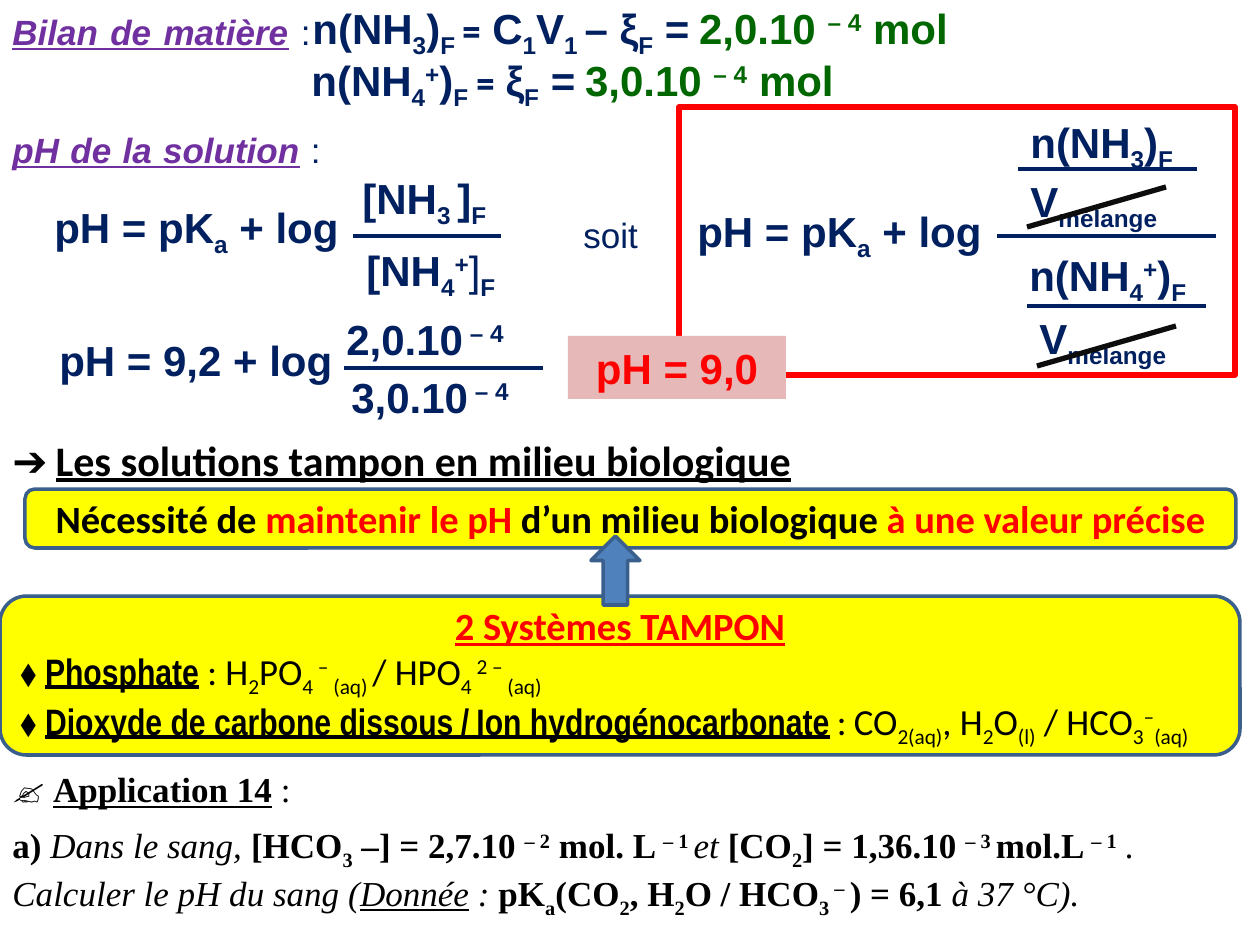
from dataclasses import dataclass, replace

import pptx
import pptx.dml.color
import pptx.enum.shapes
import pptx.enum.text
import pptx.oxml.ns
import pptx.util
from lxml import etree

RGBColor = pptx.dml.color.RGBColor
Shape = pptx.enum.shapes.MSO_SHAPE
Align = pptx.enum.text.PP_ALIGN
Anchor = pptx.enum.text.MSO_ANCHOR
AutoSize = pptx.enum.text.MSO_AUTO_SIZE

NAVY = RGBColor(0x00, 0x20, 0x60)
PURPLE = RGBColor(0x70, 0x30, 0xA0)
GREEN = RGBColor(0x00, 0x66, 0x00)
RED = RGBColor(0xFF, 0x00, 0x00)
BLACK = RGBColor(0x00, 0x00, 0x00)
INK = RGBColor(0x0D, 0x0D, 0x0D)
WHITE = RGBColor(0xFF, 0xFF, 0xFF)
YELLOW = RGBColor(0xFF, 0xFF, 0x00)
PINK = RGBColor(0xE6, 0xB9, 0xB8)
BLUE = RGBColor(0x4F, 0x81, 0xBD)
EDGE = RGBColor(0x3A, 0x5F, 0x8C)

PX_PER_INCH = 126
ROW = 63  # height of a 24 pt line of text
BASELINES = {"_": "-25000", "^": "30000"}


@dataclass(frozen=True)
class Style:
    size: int
    font: str
    color: RGBColor
    bold: bool = False
    italic: bool = False
    underline: bool = False


FORMULA = Style(24, "Arial", NAVY, bold=True)
RESULT = replace(FORMULA, color=GREEN)
EQUALS = replace(FORMULA, font="Cabin")
GAP = replace(FORMULA, size=20)
PLAIN = Style(20, "Arial", NAVY)
LABEL = Style(20, "Arial", PURPLE, True, True, True)
HEADING = Style(24, "Calibri", BLACK, bold=True, underline=True)
NEED = Style(22, "Calibri", BLACK, bold=True)
NEED_RED = replace(NEED, color=RED)
BUFFER = Style(21, "Calibri", BLACK)
BUFFER_NAME = Style(21, "Arial Narrow", BLACK, bold=True, underline=True)
BUFFER_GAP = replace(BUFFER_NAME, size=18)
TIMES = Style(20, "Times New Roman", BLACK)
TIMES_BOLD = replace(TIMES, bold=True)
TIMES_ITALIC = replace(TIMES, italic=True)


def px(length):
    return round(length * pptx.util.Inches(1) / PX_PER_INCH)


def add_spans(para, markup, style):
    """Add runs split at |, where a leading _ lowers and ^ raises the run."""
    for piece in markup.split("|"):
        span = para.add_run()
        span.text = piece.lstrip("_^")
        font = span.font
        font.size = pptx.util.Pt(style.size)
        font.name = style.font
        font.color.rgb = style.color
        font.bold, font.italic = style.bold, style.italic
        font.underline = style.underline
        if piece[0] in BASELINES:
            span._r.get_or_add_rPr().set("baseline", BASELINES[piece[0]])


def fill_text(box, paragraphs, align=Align.LEFT, anchor=Anchor.TOP, wrap=True, grow=True):
    frame = box.text_frame
    frame.word_wrap = wrap
    frame.vertical_anchor = anchor
    frame.auto_size = AutoSize.SHAPE_TO_FIT_TEXT if grow else AutoSize.NONE
    for index, spans in enumerate(paragraphs):
        para = frame.add_paragraph() if index else frame.paragraphs[0]
        para.alignment = align
        for markup, style in spans:
            add_spans(para, markup, style)


def add_text(page, left, top, width, height, spans, **layout):
    box = page.shapes.add_textbox(px(left), px(top), px(width), px(height))
    fill_text(box, [spans], **({"align": Align.JUSTIFY} | layout))


def add_term(page, left, top, width, markup):
    """Add one unwrapped numerator or denominator."""
    add_text(page, left, top, width, ROW, [(markup, FORMULA)], align=Align.LEFT, wrap=False)


def add_panel(page, kind, left, top, width, height, fill=None, line=None, weight=2):
    panel = page.shapes.add_shape(kind, px(left), px(top), px(width), px(height))
    panel.shadow.inherit = False
    if fill is None:
        panel.fill.background()
    else:
        panel.fill.solid()
        panel.fill.fore_color.rgb = fill
    if line is None:
        panel.line.fill.background()
    else:
        panel.line.color.rgb = line
        panel.line.width = pptx.util.Pt(weight)
    return panel


def add_line(page, x1, y1, x2, y2, color=NAVY, weight=2.25):
    line = page.shapes.add_connector(
        pptx.enum.shapes.MSO_CONNECTOR.STRAIGHT, px(x1), px(y1), px(x2), px(y2))
    line.line.color.rgb = color
    line.line.width = pptx.util.Pt(weight)
    etree.SubElement(line._element.spPr, pptx.oxml.ns.qn("a:effectLst"))


def add_balance(page):
    add_text(page, 0, 4, 323, 55, [("Bilan de matière", LABEL), (" : ", PLAIN)])
    add_text(page, 300, -4, 727, ROW, [
        ("n(NH|_3|)|_F ", FORMULA), ("=", EQUALS), (" ", GAP),
        ("C|_1|V|_1 |– ξ|_F| =", FORMULA), (" ", GAP), ("2,0.10 |^– 4| mol", RESULT)])
    add_text(page, 299, 48, 599, ROW, [
        ("n(NH|_4|^+|)|_F ", FORMULA), ("=", EQUALS), (" ", GAP),
        ("ξ|_F| =", FORMULA), (" ", GAP), ("3,0.10 |^– 4| mol", RESULT)])


def add_ph_calculation(page):
    add_panel(page, Shape.RECTANGLE, 679, 107, 556, 268, line=RED, weight=3)
    title = add_panel(page, Shape.RECTANGLE, 0, 122, 333, 55, fill=WHITE)
    fill_text(title, [[("pH de la solution", LABEL), (" : ", PLAIN)]], Align.JUSTIFY)

    for left, top, markup in ((42, 195, "pH = pK|_a| + log"),
                              (685, 199, "pH = pK|_a| + log"),
                              (47, 328, "pH = 9,2 + log")):
        add_text(page, left, top, 338, ROW, [(markup, FORMULA)])
    add_text(page, 571, 207, 89, 55, [("soit", PLAIN)])

    add_term(page, 350, 166, 156, "[NH|_3 |]|_F")
    add_text(page, 354, 238, 163, ROW, [
        ("[NH|_4|^+", FORMULA), ("]", replace(FORMULA, bold=False)), ("_F", FORMULA)],
        align=Align.LEFT, wrap=False)
    add_term(page, 334, 307, 190, "2,0.10|^ – 4")
    add_term(page, 339, 365, 190, "3,0.10|^ – 4")
    add_term(page, 1018, 110, 174, "n(NH|_3|)|_F")
    add_term(page, 1017, 243, 190, "n(NH|_4|^+|)|_F")
    for left, top in ((1018, 169), (1027, 306)):
        add_term(page, left, top, 169, "V|_mélange")

    for left, right, y in ((353, 501, 236), (344, 543, 368), (997, 1216, 236),
                           (1018, 1197, 169), (1027, 1206, 306)):
        add_line(page, left, y, right, y)
    for left, bottom in ((1027, 227), (1037, 366)):
        add_line(page, left, bottom, left + 139, bottom - 40, INK, 3)

    answer = add_panel(page, Shape.RECTANGLE, 568, 336, 218, ROW, fill=PINK)
    fill_text(answer, [[("pH = 9,0", replace(FORMULA, color=RED))]], Align.CENTER)


def add_buffers(page):
    add_text(page, 0, 428, 1260, ROW, [
        ("➔", replace(HEADING, bold=False, underline=False)), (" ", replace(BUFFER, size=20)),
        ("Les solutions tampon en milieu biologique", HEADING)], anchor=Anchor.MIDDLE)

    need = add_panel(page, Shape.ROUNDED_RECTANGLE, 25, 489, 1211, 59, YELLOW, EDGE)
    fill_text(need, [[
        ("Nécessité de ", NEED), ("maintenir le pH", NEED_RED),
        (" d’un milieu biologique ", NEED), ("à une valeur précise", NEED_RED)]],
        Align.CENTER, Anchor.MIDDLE, grow=False)

    systems = add_panel(page, Shape.ROUNDED_RECTANGLE, 0, 596, 1240, 159, YELLOW, EDGE)
    fill_text(systems, [
        [("2 Systèmes TAMPON", replace(NEED_RED, underline=True))],
        [("⬧ ", BUFFER), ("Phosphate", BUFFER_NAME), (" ", replace(BUFFER, bold=True)),
         (": H|_2|PO|_4 |^– |_(aq) |/ HPO|_4 |^2 – |_(aq)", BUFFER)],
        [("⬧ ", BUFFER), ("Dioxyde de carbone dissous", BUFFER_NAME), (" ", BUFFER_GAP),
         ("/", BUFFER_NAME), (" ", BUFFER_GAP), ("Ion hydrogénocarbonate", BUFFER_NAME),
         (" ", replace(BUFFER_GAP, bold=False, underline=False)), (":", BUFFER),
         (" ", replace(BUFFER, size=18)),
         ("CO|_2(aq)|, H|_2|O|_(l)| / HCO|_3|^–|_(aq)", BUFFER)],
    ], anchor=Anchor.MIDDLE, grow=False)
    systems.text_frame.paragraphs[0].alignment = Align.CENTER

    arrow = add_panel(page, Shape.RIGHT_ARROW, 581, 546, 69, 49, BLUE, EDGE)
    arrow.rotation = 270


def add_exercise(page):
    exercise = add_panel(page, Shape.RECTANGLE, 0, 770, 1260, 147, fill=WHITE)
    fill_text(exercise, [
        [("✍ ", TIMES_BOLD), ("Application 14", replace(TIMES_BOLD, underline=True)),
         ("\u00a0:", TIMES)],
        [("a)", TIMES_BOLD), (" Dans le sang, ", TIMES_ITALIC),
         ("[HCO|_3| –] = 2,7.10 |^– 2| mol. L |^– 1 ", TIMES_BOLD), ("et ", TIMES_ITALIC),
         ("[CO|_2|] = 1,36.10 |^– 3 |mol.L |^– 1", TIMES_BOLD),
         (" . Calculer le pH du sang (", TIMES_ITALIC),
         ("Donnée", replace(TIMES_ITALIC, underline=True)), (" : ", TIMES_ITALIC),
         ("pK|_a|(CO|_2|, H|_2|O / HCO|_3|^ – |) = 6,1 ", TIMES_BOLD),
         ("à 37 °C).", TIMES_ITALIC)],
    ], anchor=Anchor.MIDDLE, grow=False)
    exercise.text_frame.paragraphs[1].space_before = pptx.util.Pt(8)


def main():
    deck = pptx.Presentation()
    deck.slide_width, deck.slide_height = px(1260), px(945)
    page = deck.slides.add_slide(deck.slide_layouts[6])
    add_balance(page)
    add_ph_calculation(page)
    add_exercise(page)
    add_buffers(page)
    deck.save("out.pptx")


if __name__ == "__main__":
    main()
